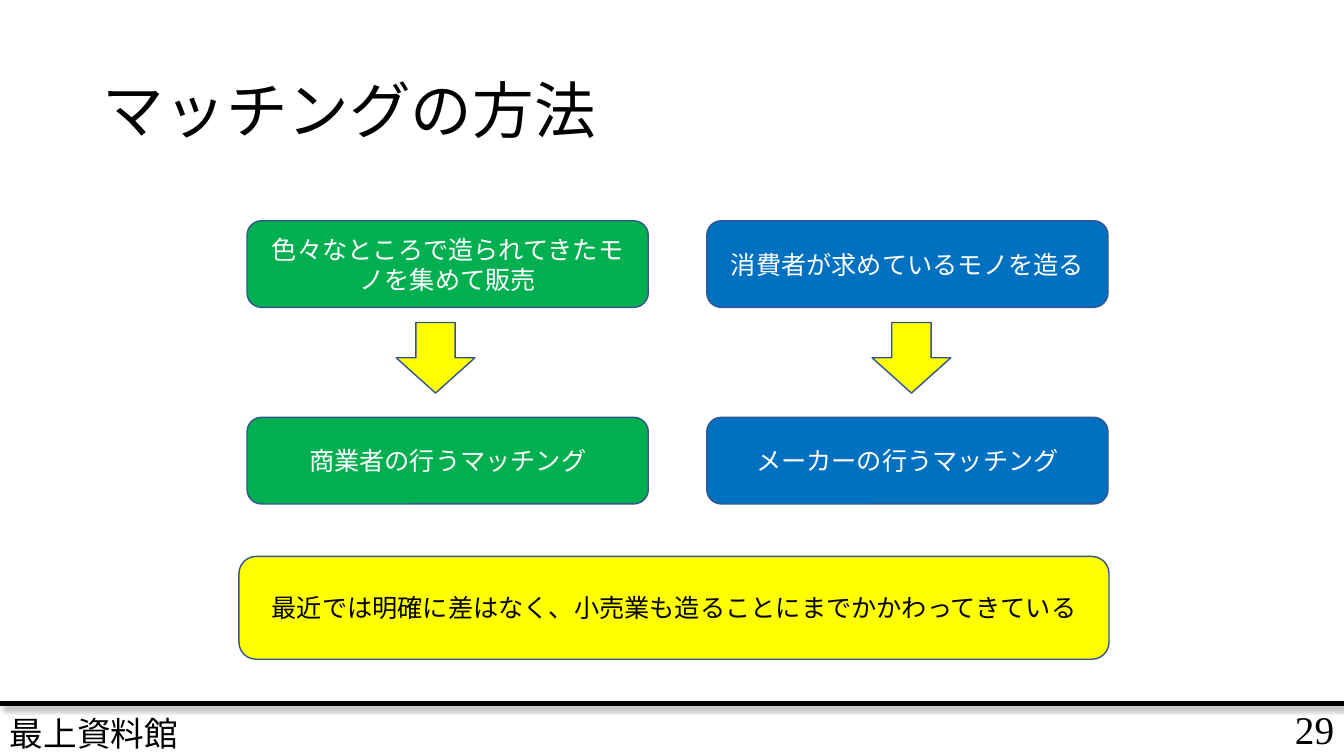
from lxml.etree import SubElement
from pptx import Presentation
from pptx.dml.color import RGBColor
from pptx.enum.lang import MSO_LANGUAGE_ID as Language
from pptx.enum.shapes import MSO_CONNECTOR as Connector, MSO_SHAPE as Shape
from pptx.enum.text import MSO_ANCHOR as Anchor, MSO_AUTO_SIZE as AutoSize, PP_ALIGN as Align
from pptx.oxml.ns import qn
from pptx.util import Emu, Pt

PX = 9144
WIDTH, HEIGHT = 1333, 750
LATIN_FONT, JAPANESE_FONT = "Times New Roman", "Noto Sans CJK JP"
BLACK = RGBColor(0x00, 0x00, 0x00)
WHITE = RGBColor(0xFF, 0xFF, 0xFF)
GREEN = RGBColor(0x00, 0xB0, 0x50)
BLUE = RGBColor(0x00, 0x70, 0xC0)
YELLOW = RGBColor(0xFF, 0xFF, 0x00)
OUTLINE = RGBColor(0x32, 0x54, 0x91)


def px(*lengths):
    """Turn pixel lengths into EMU."""
    return [Emu(length * PX) for length in lengths]


def add_shadow(properties):
    """Append a soft black shadow falling to the lower right."""
    effects = SubElement(properties, qn("a:effectLst"))
    shadow = SubElement(effects, qn("a:outerShdw"), blurRad=str(Pt(4)),
                        dist=str(Pt(3)), dir="2700000", algn="tl", rotWithShape="0")
    color = SubElement(shadow, qn("a:srgbClr"), val="000000")
    SubElement(color, qn("a:alpha"), val="40000")


def write_text(shape, text, size, color, align, font=LATIN_FONT, shadow=False):
    """Put one middle-anchored paragraph of Japanese text into a shape."""
    frame = shape.text_frame
    frame.word_wrap = True
    frame.auto_size = AutoSize.NONE
    frame.vertical_anchor = Anchor.MIDDLE
    paragraph = frame.paragraphs[0]
    paragraph.alignment = align
    paragraph.font.size = Pt(size)
    paragraph.font.name = font
    paragraph.font.color.rgb = color
    run = paragraph.add_run()
    run.text = text
    run.font.language_id = Language.JAPANESE
    properties = run._r.get_or_add_rPr()
    if shadow:
        add_shadow(properties)
    SubElement(properties, qn("a:ea"), typeface=JAPANESE_FONT)
    return paragraph


def add_block(slide, kind, box, fill, text="", color=WHITE):
    """Add a filled, outlined shape with optional centred text."""
    shape = slide.shapes.add_shape(kind, *px(*box))
    shape.shadow.inherit = False
    shape.fill.solid()
    shape.fill.fore_color.rgb = fill
    shape.line.color.rgb = OUTLINE
    shape.line.width = Pt(1)
    if text:
        write_text(shape, text, 18, color, Align.CENTER)


def add_title(slide, box, text):
    """Place and format the title placeholder."""
    title = slide.shapes.title
    title.left, title.top, title.width, title.height = px(*box)
    paragraph = write_text(title, text, 44, BLACK, Align.LEFT, JAPANESE_FONT)
    paragraph.line_spacing = 0.9


def add_method(slide, box, fill, source, result, arrow_offset):
    """Stack a source block, a down arrow and a result block in a column."""
    left, top, width, height = box
    block_height = 86
    add_block(slide, Shape.ROUNDED_RECTANGLE, (left, top, width, block_height), fill, source)
    add_block(slide, Shape.ROUNDED_RECTANGLE,
              (left, top + height - block_height, width, block_height), fill, result)
    add_block(slide, Shape.DOWN_ARROW, (left + arrow_offset, top + 101, 78, 70), YELLOW)


def add_footer(slide, box, name, number):
    """Draw the footer rule with the owner's name and the page number."""
    left, top, width, height = box
    rule = slide.shapes.add_connector(Connector.STRAIGHT, *px(left, top, left + width, top))
    rule.line.color.rgb = BLACK
    rule.line.width = Pt(3)
    add_shadow(rule._element.spPr)
    name_box = slide.shapes.add_textbox(*px(left, top + 7, 360, height - 7))
    write_text(name_box, name, 24, BLACK, Align.LEFT, shadow=True)
    number_box = slide.shapes.add_textbox(*px(left + width - 178, top, 178, height - 1))
    write_text(number_box, number, 28, BLACK, Align.RIGHT, shadow=True)


def main():
    """Build the matching-methods slide and save it."""
    presentation = Presentation()
    presentation.slide_width, presentation.slide_height = px(WIDTH, HEIGHT)
    slide = presentation.slides.add_slide(presentation.slide_layouts[5])
    add_footer(slide, (0, 698, WIDTH, 52), "最上資料館", "29")
    add_title(slide, (92, 40, 1150, 145), "マッチングの方法")
    add_method(slide, (245, 219, 398, 281), GREEN,
               "色々なところで造られてきたモノを集めて販売", "商業者の行うマッチング", 148)
    add_method(slide, (701, 219, 398, 281), BLUE,
               "消費者が求めているモノを造る", "メーカーの行うマッチング", 164)
    add_block(slide, Shape.ROUNDED_RECTANGLE, (237, 552, 863, 102), YELLOW,
              "最近では明確に差はなく、小売業も造ることにまでかかわってきている", BLACK)
    presentation.save("out.pptx")


if __name__ == "__main__":
    main()
